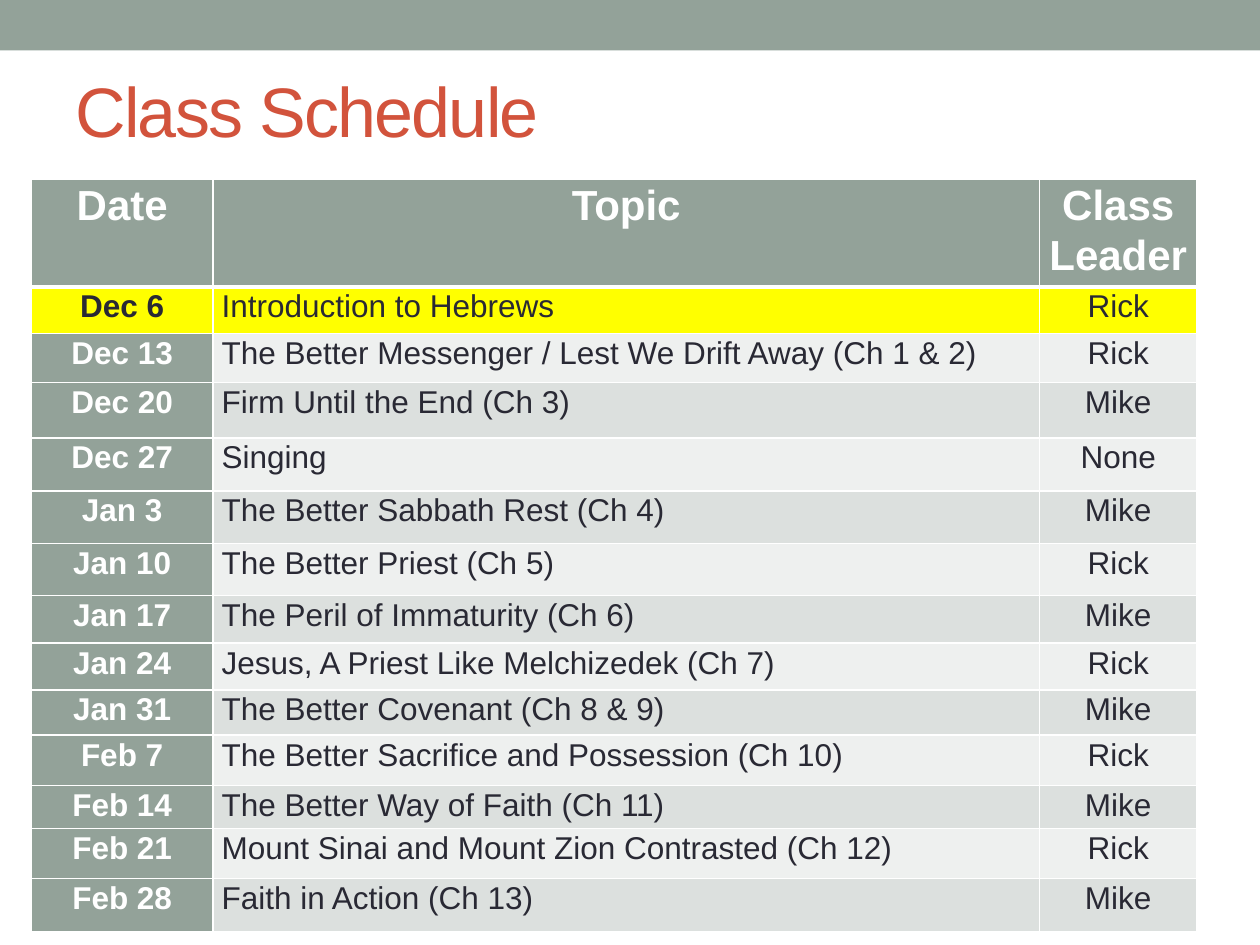
from pptx import Presentation
from pptx.dml.color import RGBColor as RGB
from pptx.enum.shapes import MSO_SHAPE as Shape
from pptx.enum.text import MSO_ANCHOR as Anchor, PP_ALIGN as Align
from pptx.oxml.ns import qn
from pptx.util import Inches, Pt
from lxml.etree import SubElement as Sub

SAGE, WHITE, INK, RUST, GLOW = "93A299", "FFFFFF", "292934", "D2533C", "FFFF00"
BANDS = ["DCE0DE", "EEF0EF"]
HEAD = ("Date", "Topic", "Class Leader")
PLAN = [
    ("Dec 6", "Introduction to Hebrews", "Rick"),
    ("Dec 13", "The Better Messenger / Lest We Drift Away (Ch 1 & 2)", "Rick"),
    ("Dec 20", "Firm Until the End (Ch 3)", "Mike"),
    ("Dec 27", "Singing", "None"),
    ("Jan 3", "The Better Sabbath Rest (Ch 4)", "Mike"),
    ("Jan 10", "The Better Priest (Ch 5)", "Rick"),
    ("Jan 17", "The Peril of Immaturity (Ch 6)", "Mike"),
    ("Jan 24", "Jesus, A Priest Like Melchizedek (Ch 7)", "Rick"),
    ("Jan 31", "The Better Covenant (Ch 8 & 9)", "Mike"),
    ("Feb 7", "The Better Sacrifice and Possession (Ch 10)", "Rick"),
    ("Feb 14", "The Better Way of Faith (Ch 11)", "Mike"),
    ("Feb 21", "Mount Sinai and Mount Zion Contrasted (Ch 12)", "Rick"),
    ("Feb 28", "Faith in Action (Ch 13)", "Mike"),
]
COLS = [1.44, 6.56, 1.25]
ROWS = [0.61, 0.37, 0.39, 0.44, 0.42, 0.42, 0.41,
        0.38, 0.37, 0.36, 0.4, 0.34, 0.4, 0.42]


def paint(fill, tone):
    fill.solid()
    fill.fore_color.rgb = RGB.from_string(tone)


def write(para, text, size, tone, bold=False):
    run = para.add_run()
    run.text = text
    font = run.font
    font.name, font.size, font.bold = "Arial", Pt(size), bold
    font.color.rgb = RGB.from_string(tone)
    return run


def edge(cell, base):
    props = cell._tc.get_or_add_tcPr()
    for side, wide in zip("LRTB", (1, 1, 1, base)):
        line = Sub(props, qn(f"a:ln{side}"), w=str(Pt(wide)))
        Sub(Sub(line, qn("a:solidFill")), qn("a:srgbClr"), val=WHITE)


def style(row, col):
    if row == 0:
        return SAGE, WHITE, 24, True
    if row == 1:
        return GLOW, INK, 18, col == 0
    if col == 0:
        return SAGE, WHITE, 18, True
    return BANDS[(row + 1) % 2], INK, 18, False


deck = Presentation()
deck.slide_width, deck.slide_height = Inches(10), Inches(7.5)
slide = deck.slides.add_slide(deck.slide_layouts[6])

bar = slide.shapes.add_shape(Shape.RECTANGLE, 0, 0, deck.slide_width, Inches(0.4))
bar.shadow.inherit = False
paint(bar.fill, SAGE)
bar.line.fill.background()

title = slide.shapes.add_textbox(Inches(0.5), Inches(0.33), Inches(9), Inches(1.08))
frame = title.text_frame
frame.word_wrap = True
frame.vertical_anchor = Anchor.MIDDLE
run = write(frame.paragraphs[0], "Class Schedule", 40, RUST)
run.font._element.set("spc", "-100")

grid = slide.shapes.add_table(
    len(ROWS), len(COLS), Inches(0.25), Inches(1.42),
    Inches(sum(COLS)), Inches(sum(ROWS))).table
for col, wide in zip(grid.columns, COLS):
    col.width = Inches(wide)
for row, tall in zip(grid.rows, ROWS):
    row.height = Inches(tall)

for r, texts in enumerate([HEAD] + PLAN):
    for c, text in enumerate(texts):
        back, tone, size, bold = style(r, c)
        cell = grid.cell(r, c)
        cell.margin_left = cell.margin_right = Inches(0.07)
        cell.margin_top = cell.margin_bottom = 0
        edge(cell, 3 if r == 0 else 1)
        paint(cell.fill, back)
        para = cell.text_frame.paragraphs[0]
        para.line_spacing = 1.07
        para.alignment = Align.LEFT if r and c == 1 else Align.CENTER
        write(para, text, size, tone, bold)

deck.save("out.pptx")
